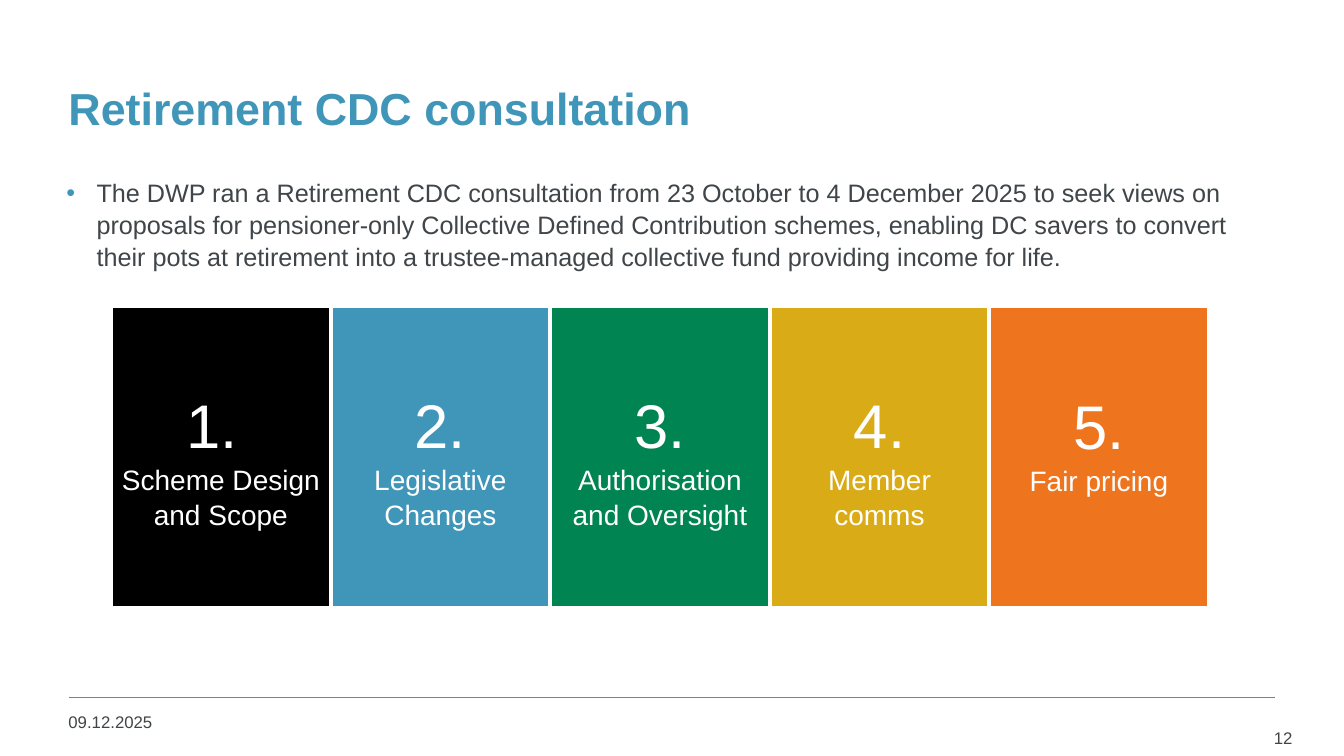
from pptx import Presentation
from pptx.dml.color import RGBColor
from pptx.enum.shapes import MSO_CONNECTOR, MSO_SHAPE
from pptx.enum.text import MSO_ANCHOR, PP_ALIGN
from pptx.oxml.ns import qn
from pptx.util import Pt
from lxml.etree import SubElement

HUES = {
    "white": "FFFFFF", "black": "000000", "blue": "4096B8",
    "green": "008452", "gold": "D9AB16", "orange": "EE741D", "grey": "3F4548",
}


def add_run(para, text, size, hue, bold=False):
    run = para.add_run()
    run.text = text
    font = run.font
    font.name, font.size, font.bold = "Arial", Pt(size), bold
    font.color.rgb = RGBColor.from_string(HUES[hue])


def add_box(left, top, width, height, anchor=MSO_ANCHOR.TOP):
    box = slide.shapes.add_textbox(Pt(left), Pt(top), Pt(width), Pt(height))
    frame = box.text_frame
    frame.word_wrap = True
    frame.vertical_anchor = anchor
    return frame.paragraphs[0]


deck = Presentation()
deck.slide_width, deck.slide_height = Pt(960), Pt(540)
slide = deck.slides.add_slide(deck.slide_layouts[6])

# Footer rule
rule = slide.shapes.add_connector(
    MSO_CONNECTOR.STRAIGHT, Pt(49), Pt(498.2), Pt(911), Pt(498.2))
rule.line.color.rgb = RGBColor.from_string(HUES["blue"])
rule.line.width = Pt(1)
SubElement(rule._element.spPr, qn("a:effectLst"))

# Title
title = add_box(41.8, 31.7, 870.5, 90, MSO_ANCHOR.MIDDLE)
add_run(title, "Retirement CDC consultation", 32, "blue", True)

# Bullet text
body = add_box(40.3, 122.4, 878.4, 80)
body.line_spacing = 1.05
props = body._p.get_or_add_pPr()
props.set("marL", str(Pt(21.6)))
props.set("indent", str(-Pt(21.6)))
tint = SubElement(props, qn("a:buClr"))
SubElement(tint, qn("a:srgbClr")).set("val", HUES["blue"])
SubElement(props, qn("a:buFont")).set("typeface", "Arial")
SubElement(props, qn("a:buChar")).set("char", "•")
add_run(body, "The DWP ran a Retirement CDC consultation from 23 October to "
        "4 December 2025 to seek views on proposals for pensioner-only "
        "Collective Defined Contribution schemes, enabling DC savers to "
        "convert their pots at retirement into a trustee-managed collective "
        "fund providing income for life.", 18, "grey")

# Topic cards: the last column is extra room below a one-line label
cards = [
    ("1. ", "Scheme Design and Scope", "black", 0),
    ("2.", "Legislative Changes", "blue", 0),
    ("3.", "Authorisation and Oversight", "green", 0),
    ("4.", "Member comms", "gold", 0),
    ("5.", "Fair pricing", "orange", 24),
]
for i, (mark, label, hue, room) in enumerate(cards):
    card = slide.shapes.add_shape(
        MSO_SHAPE.RECTANGLE, Pt(79.8 + 156.8 * i), Pt(219), Pt(156), Pt(215))
    card.shadow.inherit = False
    card.fill.solid()
    card.fill.fore_color.rgb = RGBColor.from_string(HUES[hue])
    card.line.color.rgb = RGBColor.from_string(HUES["white"])
    card.line.width = Pt(2)
    frame = card.text_frame
    frame.word_wrap = True
    frame.vertical_anchor = MSO_ANCHOR.MIDDLE
    frame.margin_left = frame.margin_right = Pt(7)
    frame.margin_bottom = Pt(3.6 + room)
    head, foot = frame.paragraphs[0], frame.add_paragraph()
    for para, text, size in ((head, mark, 44), (foot, label, 20)):
        para.alignment = PP_ALIGN.CENTER
        para.line_spacing = 1.05
        add_run(para, text, size, "white")

# Date and page number
date = add_box(41.8, 504.7, 211.7, 26)
add_run(date, "09.12.2025", 12, "grey")
page = add_box(862.6, 516.2, 67.7, 23.8)
page.alignment = PP_ALIGN.RIGHT
add_run(page, "12", 12, "grey")

deck.save("out.pptx")
